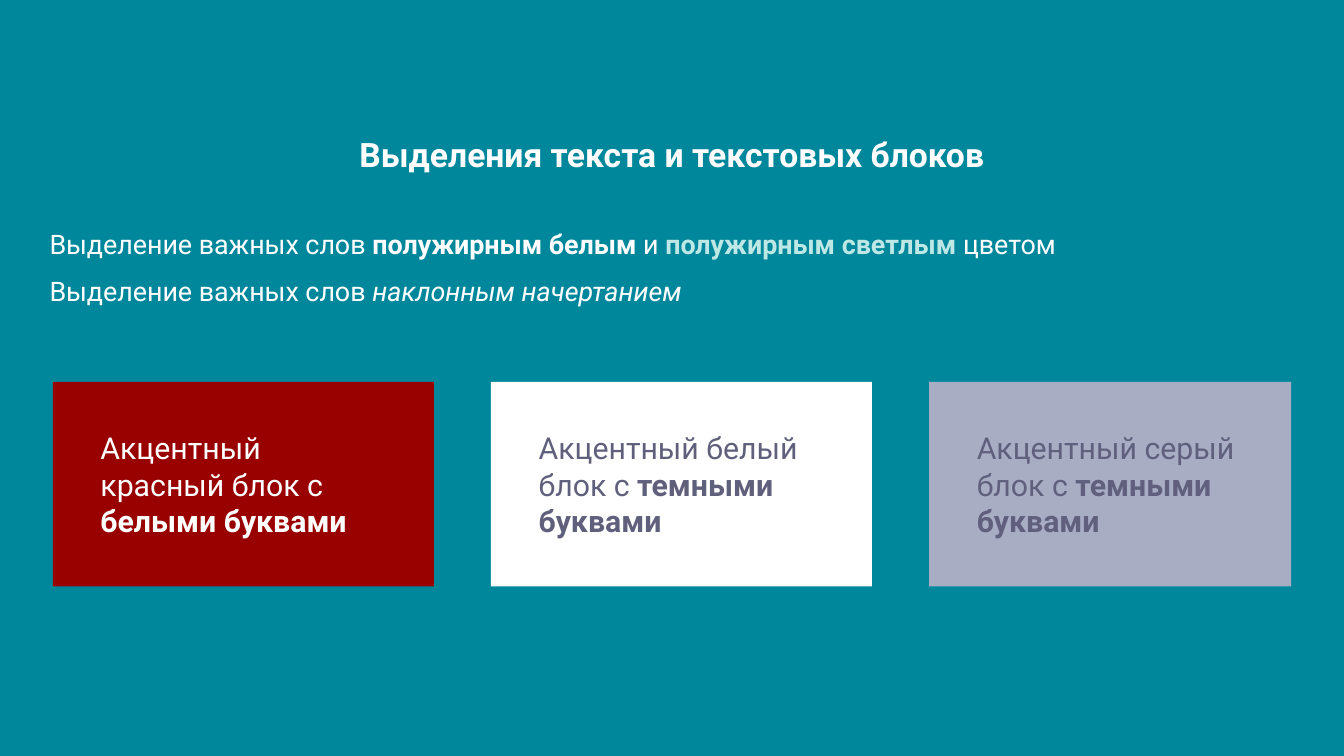
from pptx import Presentation
from pptx.dml.color import RGBColor
from pptx.enum.shapes import MSO_SHAPE as SHAPE
from pptx.enum.text import MSO_ANCHOR as ANCHOR, MSO_AUTO_SIZE as AUTO, PP_ALIGN as ALIGN
from pptx.oxml.xmlchemy import OxmlElement
from pptx.util import Cm, Pt

COLORS = {
    "teal": "00879B", "white": "FFFFFF", "mint": "BEE8E6",
    "red": "990000", "gray": "A8ADC4", "dark": "60607D",
}
BODY = [
    [("Выделение важных слов ", {}), ("полужирным белым", {"bold": True}), (" и ", {}),
     ("полужирным светлым ", {"bold": True, "color": "mint"}), ("цветом", {})],
    [("Выделение важных слов", {}), (" наклонным начертанием", {"italic": True})],
]
CARDS = [
    (8, "red", "white", "Акцентный красный блок с ", "белыми буквами"),
    (8, "white", "dark", "Акцентный белый блок с ", "темными буквами"),
    (7.6, "gray", "dark", "Акцентный серый блок с ", "темными буквами"),
]


def rgb(name):
    return RGBColor.from_string(COLORS[name])


def place(sp, box):
    sp.left, sp.top, sp.width, sp.height = (Cm(v) for v in box)


def set_frame(tf, inset_x, inset_y, anchor):
    values = {
        "word_wrap": True, "auto_size": AUTO.NONE, "vertical_anchor": anchor,
        "margin_left": Cm(inset_x), "margin_right": Cm(inset_x),
        "margin_top": Cm(inset_y), "margin_bottom": Cm(inset_y),
    }
    for name, value in values.items():
        setattr(tf, name, value)


def add_run(p, text, size, color="white", bold=False, italic=False):
    r = p.add_run()
    r.text = text
    values = {"name": "Roboto", "size": Pt(size), "bold": bold, "italic": italic}
    for name, value in values.items():
        setattr(r.font, name, value)
    r.font.color.rgb = rgb(color)


def add_title(slide, box, text):
    sp = slide.shapes.title
    place(sp, box)
    set_frame(sp.text_frame, 0.13, 0.13, ANCHOR.MIDDLE)
    p = sp.text_frame.paragraphs[0]
    p.alignment, p.line_spacing = ALIGN.CENTER, 0.9
    add_run(p, text, 20, bold=True)


def add_body(slide, box, paragraphs):
    sp = slide.placeholders[1]
    place(sp, box)
    tf = sp.text_frame
    set_frame(tf, 0.25, 0.13, ANCHOR.TOP)
    for i, runs in enumerate(paragraphs):
        p = tf.add_paragraph() if i else tf.paragraphs[0]
        pPr = p._p.get_or_add_pPr()
        pPr.set("marL", str(Cm(0.9)))
        pPr.set("indent", str(-Cm(0.9)))
        pPr.append(OxmlElement("a:buNone"))
        p.alignment, p.line_spacing = ALIGN.LEFT, 0.9
        p.space_before = Pt(11.1 if i else 0)
        for text, style in runs:
            add_run(p, text, 16, **style)


def add_card(slide, box, fill, color, text, accent):
    sp = slide.shapes.add_shape(SHAPE.RECTANGLE, *(Cm(v) for v in box))
    sp.shadow.inherit = False
    sp.fill.solid()
    sp.fill.fore_color.rgb = rgb(fill)
    sp.line.fill.background()
    set_frame(sp.text_frame, 1, 1, ANCHOR.MIDDLE)
    p = sp.text_frame.paragraphs[0]
    p.alignment = ALIGN.LEFT
    add_run(p, text, 18, color)
    add_run(p, accent, 18, color, bold=True)


def add_cards(slide, box, cards, gap=1.2):
    left, top, height = box
    for width, *content in cards:
        add_card(slide, (left, top, width, height), *content)
        left += width + gap


def main():
    prs = Presentation()
    prs.slide_width, prs.slide_height = Cm(28.22), Cm(15.88)
    slide = prs.slides.add_slide(prs.slide_layouts[1])
    slide.background.fill.solid()
    slide.background.fill.fore_color.rgb = rgb("teal")
    add_title(slide, (0, 2.54, 28.22, 1.5), "Выделения текста и текстовых блоков")
    add_body(slide, (0.79, 4.72, 26.75, 2.21), BODY)
    add_cards(slide, (1.11, 8.02, 4.3), CARDS)
    prs.save("out.pptx")


if __name__ == "__main__":
    main()
